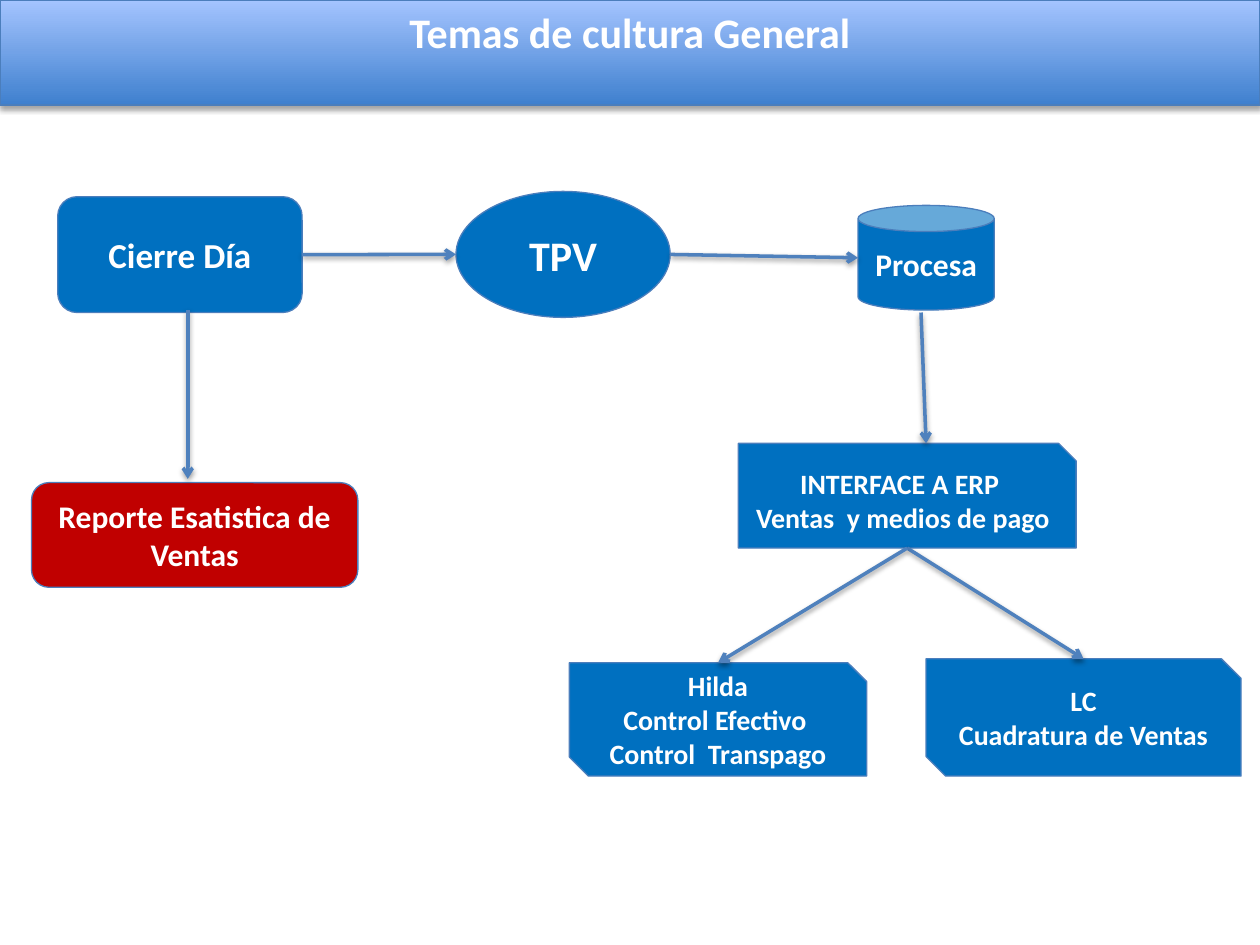
from lxml.etree import SubElement
from pptx import Presentation
from pptx.dml.color import RGBColor
from pptx.enum.shapes import MSO_CONNECTOR, MSO_SHAPE
from pptx.enum.text import MSO_ANCHOR, MSO_AUTO_SIZE, PP_ALIGN
from pptx.oxml.ns import qn
from pptx.util import Pt

BLUE, RED, WHITE = "0070C0", "C00000", "FFFFFF"
OUTLINE, ARROW = "4B7EBC", "4F81BD"
TOP, LEFT, BOTTOM, RIGHT = range(4)


def color(hex_value):
    return RGBColor.from_string(hex_value)


def add_shadow(shape, opacity, distance):
    effects = SubElement(shape._element.spPr, qn("a:effectLst"))
    shadow = SubElement(
        effects, qn("a:outerShdw"), blurRad=str(Pt(3.1)), dist=str(Pt(distance)),
        dir="5400000", rotWithShape="0")
    black = SubElement(shadow, qn("a:srgbClr"), val="000000")
    SubElement(black, qn("a:alpha"), val=str(opacity * 1000))


def place(shape, box):
    shape.left, shape.top, shape.width, shape.height = map(Pt, box)


def set_outline(shape):
    shape.line.color.rgb = color(OUTLINE)
    shape.line.width = Pt(0.75)


def write(shape, text, size, anchor):
    frame = shape.text_frame
    frame.text = text
    frame.word_wrap = True
    frame.vertical_anchor = anchor
    for paragraph in frame.paragraphs:
        paragraph.alignment = PP_ALIGN.CENTER
        font = paragraph.font
        font.name, font.size, font.bold = "Calibri", Pt(size), True
        font.color.rgb = color(WHITE)


def title_bar(slide, box, text):
    title = slide.shapes.title
    place(title, box)
    title.fill.gradient()
    title.fill.gradient_angle = 90
    for stop, (position, shade) in zip(
            title.fill.gradient_stops, [(0, "3F80CE"), (1, "A4C4FF")]):
        stop.position = position
        stop.color.rgb = color(shade)
    set_outline(title)
    add_shadow(title, 35, 1.8)
    write(title, text, 24, MSO_ANCHOR.TOP)
    title.text_frame.auto_size = MSO_AUTO_SIZE.SHAPE_TO_FIT_TEXT


def step(slide, kind, box, text, size, fill=BLUE):
    shape = slide.shapes.add_shape(kind, *map(Pt, box))
    shape.shadow.inherit = False
    shape.fill.solid()
    shape.fill.fore_color.rgb = color(fill)
    set_outline(shape)
    write(shape, text, size, MSO_ANCHOR.MIDDLE)
    return shape


def side_middle(shape, side):
    across, down = [(0.5, 0), (0, 0.5), (0.5, 1), (1, 0.5)][side]
    return (shape.left + int(shape.width * across),
            shape.top + int(shape.height * down))


def arrow(slide, start, end):
    connector = slide.shapes.add_connector(MSO_CONNECTOR.STRAIGHT, *start, *end)
    connector.line.color.rgb = color(ARROW)
    connector.line.width = Pt(2)
    SubElement(connector.line._get_or_add_ln(), qn("a:tailEnd"), type="arrow")
    add_shadow(connector, 38, 1.6)
    return connector


def flow(slide, box):
    x, y = box[:2]

    def add(kind, left, top, width, height, text, size, fill=BLUE):
        return step(slide, kind, (x + left, y + top, width, height), text, size, fill)

    def point(left, top):
        return Pt(x + left), Pt(y + top)

    closing = add(MSO_SHAPE.ROUNDED_RECTANGLE, 15, 3, 139.7, 66.2, "Cierre Día", 20)
    till = add(MSO_SHAPE.OVAL, 242.6, 0, 122.4, 72, "TPV", 24)
    process = add(MSO_SHAPE.CAN, 472.3, 8, 77.8, 59.8, "Procesa", 18)
    interface = add(MSO_SHAPE.SNIP_1_RECTANGLE, 403.9, 144, 193, 59.8,
                    "INTERFACE A ERP \nVentas  y medios de pago", 16)
    cash = add(MSO_SHAPE.SNIP_2_DIAG_RECTANGLE, 307.4, 269.3, 169.9, 64.8,
               "Hilda\nControl Efectivo \nControl  Transpago", 16)
    balance = add(MSO_SHAPE.SNIP_2_DIAG_RECTANGLE, 511.2, 267.1, 180, 67,
                  "LC\nCuadratura de Ventas", 16)
    add(MSO_SHAPE.ROUNDED_RECTANGLE, 0, 166.4, 186.5, 59.8,
        "Reporte Esatistica de Ventas", 18, RED)

    to_till = arrow(slide, side_middle(closing, RIGHT), side_middle(till, LEFT))
    to_till.begin_connect(closing, RIGHT)
    for target in (balance, cash):
        branch = arrow(slide, side_middle(interface, BOTTOM), side_middle(target, TOP))
        branch.begin_connect(interface, BOTTOM)
    arrow(slide, side_middle(till, RIGHT), side_middle(process, LEFT))
    arrow(slide, point(508.3, 69.2), point(511.2, 144))
    arrow(slide, point(89.3, 67.7), point(89.3, 164.2))


def main():
    deck = Presentation()
    deck.slide_width, deck.slide_height = Pt(720), Pt(540)
    slide = deck.slides.add_slide(deck.slide_layouts[5])
    title_bar(slide, (0, 0, 720, 36.4), "Temas de cultura General")
    flow(slide, (18, 109.4, 691.2, 334.1))
    deck.save("out.pptx")


if __name__ == "__main__":
    main()
